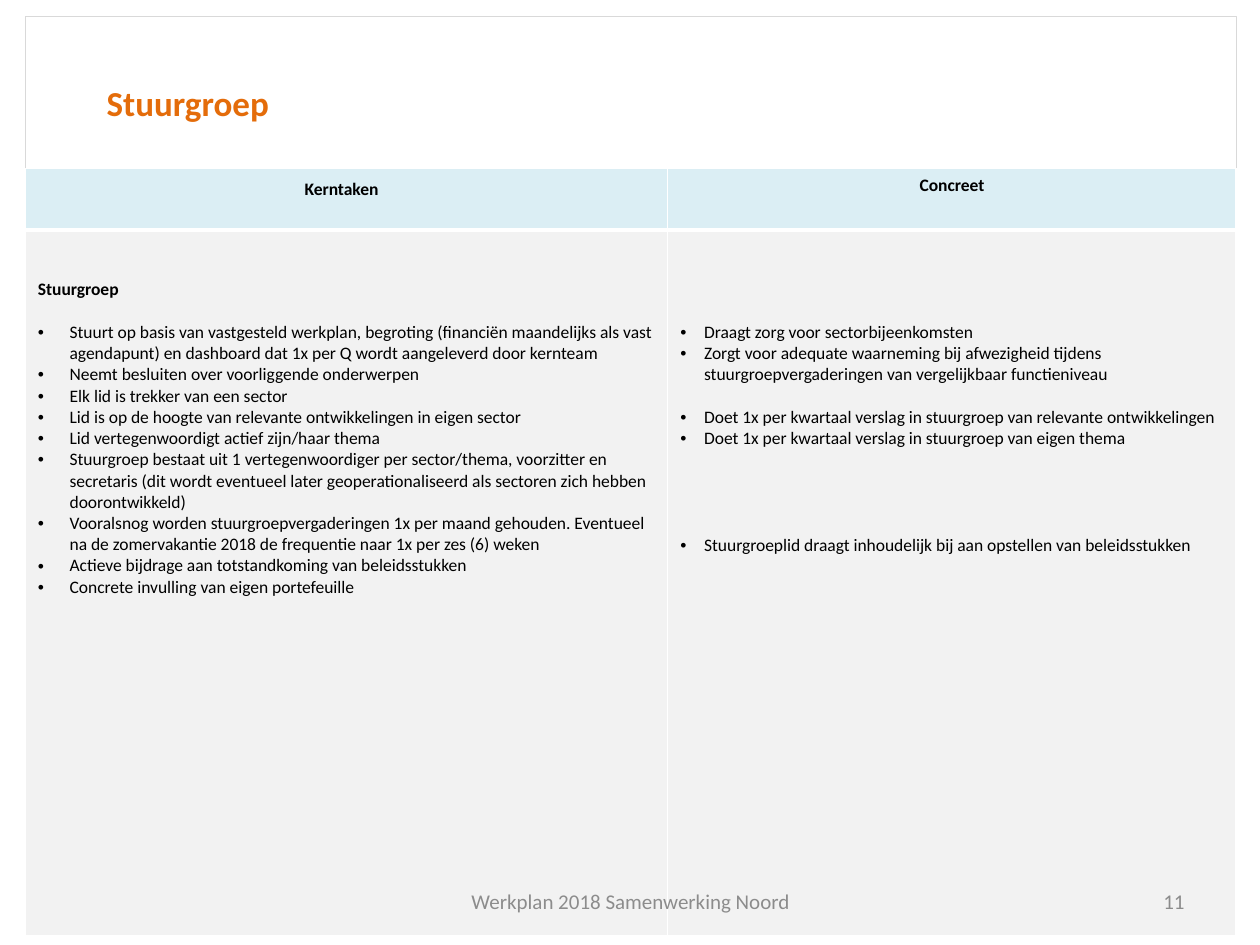
import dataclasses

import lxml.etree
import pptx
import pptx.dml.color
import pptx.enum.shapes
import pptx.enum.text
import pptx.oxml.ns
import pptx.util

Cm = pptx.util.Cm
Pt = pptx.util.Pt
Align = pptx.enum.text.PP_ALIGN
Anchor = pptx.enum.text.MSO_ANCHOR
qn = pptx.oxml.ns.qn


@dataclasses.dataclass(frozen=True)
class Theme:
    font: str = "Calibri"
    title: str = "E46C0A"
    text: str = "000000"
    footer: str = "8C8C8C"
    frame: str = "D9D9D9"
    header_fill: str = "DBEEF4"
    body_fill: str = "F2F2F2"
    border: str = "FFFFFF"
    title_size: int = 20
    table_size: int = 10
    footer_size: int = 12
    line_pitch: float = 12.2


THEME = Theme()

CORE_TASKS = [
    ("Stuurt op basis van vastgesteld werkplan, begroting (financiën maandelijks als vast "
     "agendapunt) en dashboard dat 1x per Q wordt aangeleverd door kernteam", 1),
    ("Neemt besluiten over voorliggende onderwerpen", 0),
    ("Elk lid is trekker van een sector", 0),
    ("Lid is op de hoogte van relevante ontwikkelingen in eigen sector", 0),
    ("Lid vertegenwoordigt actief zijn/haar thema", 0),
    ("Stuurgroep bestaat uit 1 vertegenwoordiger per sector/thema, voorzitter en secretaris "
     "(dit wordt eventueel later geoperationaliseerd als sectoren zich hebben doorontwikkeld)", 0),
    ("Vooralsnog worden stuurgroepvergaderingen 1x per maand gehouden. Eventueel na de "
     "zomervakantie 2018 de frequentie naar 1x per zes (6) weken", 0),
    ("Actieve bijdrage aan totstandkoming van beleidsstukken", 0),
    ("Concrete invulling van eigen portefeuille", 0),
]
ACTIONS = [
    ("Draagt zorg voor sectorbijeenkomsten", 0),
    ("Zorgt voor adequate waarneming bij afwezigheid tijdens stuurgroepvergaderingen van "
     "vergelijkbaar functieniveau", 0),
    ("Doet 1x per kwartaal verslag in stuurgroep van relevante ontwikkelingen", 1),
    ("Doet 1x per kwartaal verslag in stuurgroep van eigen thema", 0),
    ("Stuurgroeplid draagt inhoudelijk bij aan opstellen van beleidsstukken", 4),
]


def rgb(value):
    return pptx.dml.color.RGBColor.from_string(value)


def write(para, text, size, color, bold=False, align=Align.LEFT):
    para.add_run().text = text
    para.alignment = align
    para.font.name = THEME.font
    para.font.size = Pt(size)
    para.font.bold = bold
    para.font.color.rgb = rgb(color)


def add_frame(page):
    frame = page.shapes.add_shape(pptx.enum.shapes.MSO_SHAPE.RECTANGLE,
                                  Cm(0.51), Cm(0.33), Cm(24.41), Cm(18.21))
    frame.shadow.inherit = False
    frame.fill.background()
    frame.line.color.rgb = rgb(THEME.frame)
    frame.line.width = Pt(0.25)


def add_text(page, area, text, size, color, bold=False, align=Align.LEFT, anchor=Anchor.TOP):
    box = page.shapes.add_textbox(*(Cm(length) for length in area))
    box.text_frame.word_wrap = True
    box.text_frame.vertical_anchor = anchor
    write(box.text_frame.paragraphs[0], text, size, color, bold, align)


def style_cell(cell, fill, bottom_width=1):
    properties = cell._tc.get_or_add_tcPr()
    for side, width in (("L", 1), ("R", 1), ("T", 1), ("B", bottom_width)):
        line = lxml.etree.SubElement(properties, qn(f"a:ln{side}"), w=str(Pt(width)))
        solid = lxml.etree.SubElement(line, qn("a:solidFill"))
        lxml.etree.SubElement(solid, qn("a:srgbClr"), val=THEME.border)
    cell.fill.solid()
    cell.fill.fore_color.rgb = rgb(fill)


def fill_header(cell, text):
    style_cell(cell, THEME.header_fill, bottom_width=3)
    write(cell.text_frame.paragraphs[0], text, THEME.table_size, THEME.text, True, Align.CENTER)


def add_bullet(para, text, indent, gap_lines):
    properties = para._p.get_or_add_pPr()
    properties.set("marL", str(Cm(indent)))
    properties.set("indent", str(-Cm(indent)))
    lxml.etree.SubElement(properties, qn("a:buFont"), typeface="Arial")
    lxml.etree.SubElement(properties, qn("a:buChar"), char="•")
    para.space_before = Pt(gap_lines * THEME.line_pitch)
    write(para, text, THEME.table_size, THEME.text)


def fill_body(cell, bullets, indent, top, heading=None):
    style_cell(cell, THEME.body_fill)
    cell.margin_top = Cm(top)
    frame = cell.text_frame
    para = frame.paragraphs[0]
    if heading:
        write(para, heading, THEME.table_size, THEME.text, bold=True)
        para = frame.add_paragraph()
    for index, (text, gap_lines) in enumerate(bullets):
        if index:
            para = frame.add_paragraph()
        add_bullet(para, text, indent, gap_lines)


def add_task_table(page):
    widths, heights = (12.95, 11.46), (1.24, 14.23)
    table = page.shapes.add_table(2, 2, Cm(0.51), Cm(3.4),
                                  Cm(sum(widths)), Cm(sum(heights))).table
    for column, width in zip(table.columns, widths):
        column.width = Cm(width)
    for row, height in zip(table.rows, heights):
        row.height = Cm(height)
    tasks_header = table.cell(0, 0)
    fill_header(tasks_header, "Kerntaken")
    tasks_header.margin_left, tasks_header.margin_right = Cm(0.3), Cm(0.5)
    tasks_header.margin_top = Cm(0.2)
    fill_header(table.cell(0, 1), "Concreet")
    fill_body(table.cell(1, 0), CORE_TASKS, 0.64, 0.99, heading="Stuurgroep")
    fill_body(table.cell(1, 1), ACTIONS, 0.48, 1.85)


def main():
    deck = pptx.Presentation()
    deck.slide_width, deck.slide_height = Cm(25.4), Cm(19.05)
    page = deck.slides.add_slide(deck.slide_layouts[6])
    add_frame(page)
    add_text(page, (1.9, 1.52, 22, 1.12), "Stuurgroep", THEME.title_size, THEME.title, bold=True)
    add_task_table(page)
    add_text(page, (18.21, 17.65, 5.92, 1.02), "11", THEME.footer_size, THEME.footer,
             align=Align.RIGHT, anchor=Anchor.MIDDLE)
    add_text(page, (8.69, 17.65, 8.05, 1.02), "Werkplan 2018 Samenwerking Noord",
             THEME.footer_size, THEME.footer, align=Align.CENTER, anchor=Anchor.MIDDLE)
    deck.save("out.pptx")


if __name__ == "__main__":
    main()
